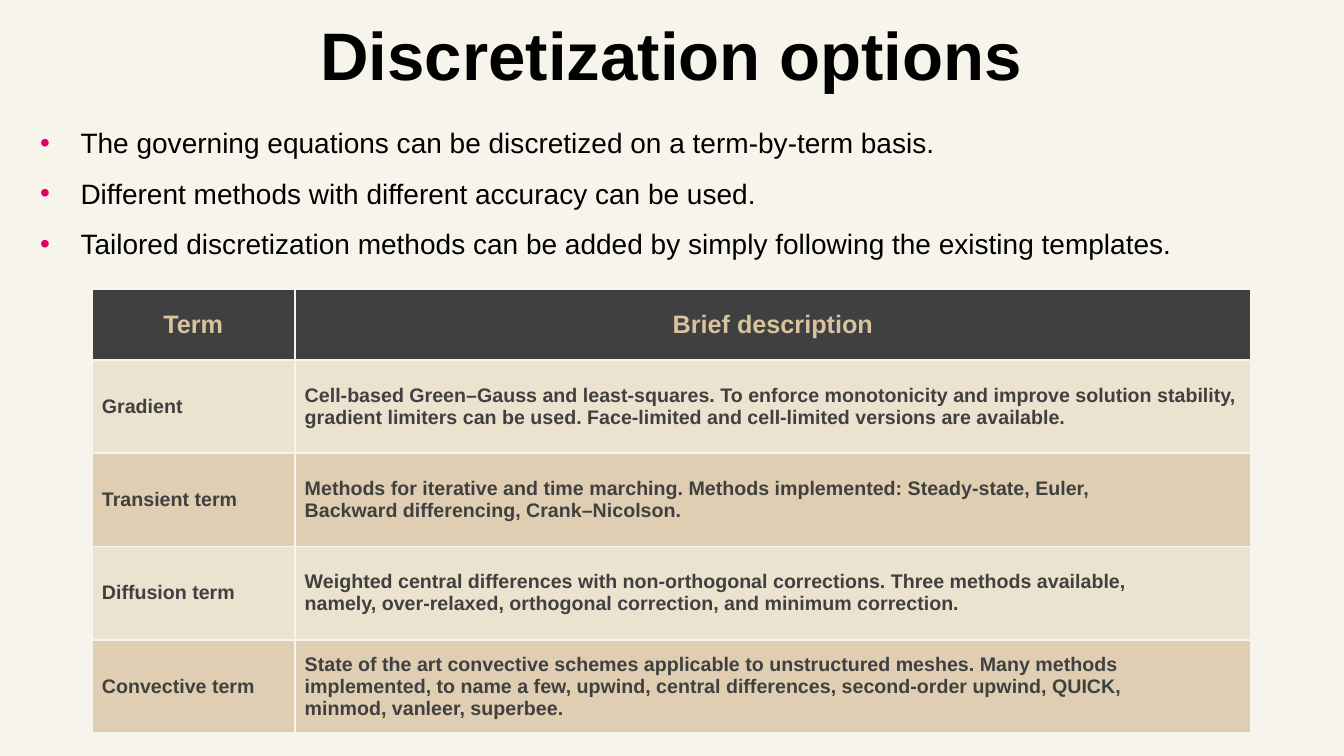
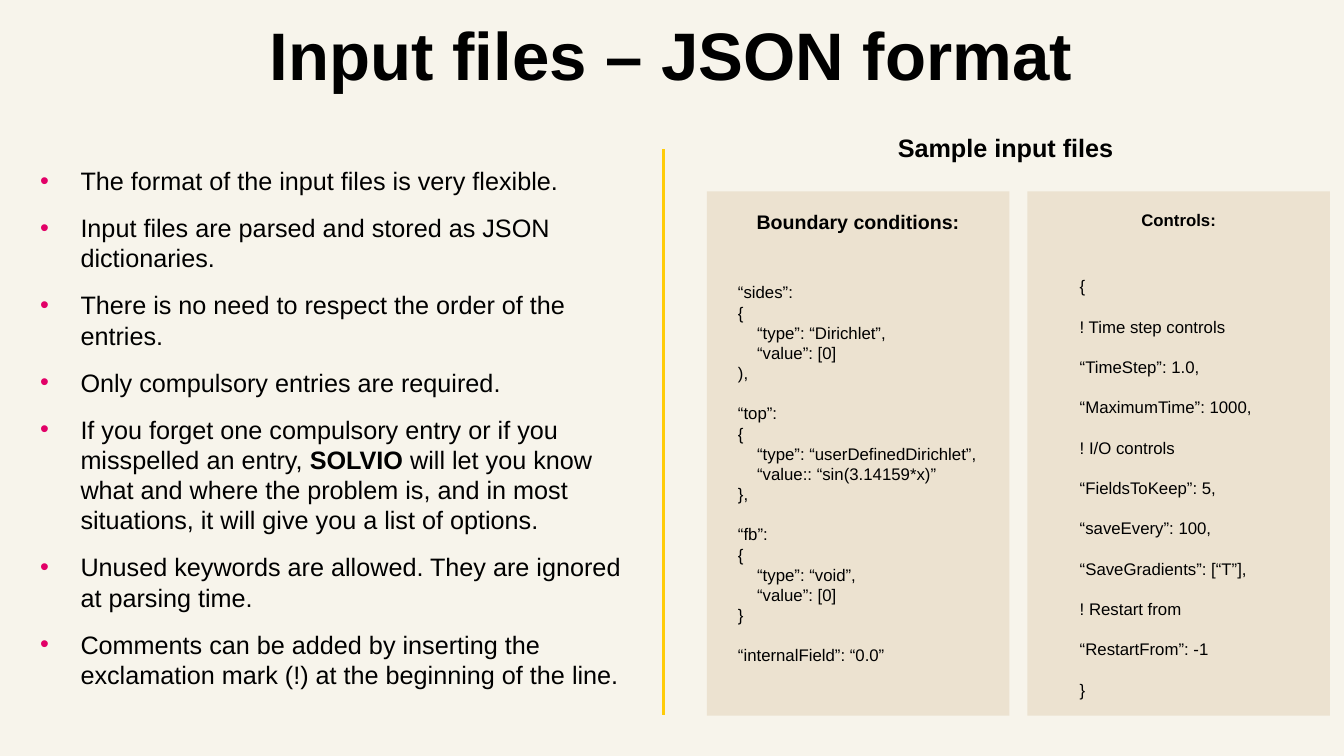
from dataclasses import dataclass

from lxml import etree
from pptx import Presentation
from pptx import util as u
from pptx.dml.color import RGBColor
from pptx.enum import shapes, text
from pptx.oxml import ns


@dataclass(frozen=True)
class Theme:
    font: str = "Arial"
    page: str = "F7F4EB"
    ink: str = "000000"
    bullet: str = "E20067"
    rule: str = "FFCC09"
    panel: str = "ECE2D0"
    band: str = "E0CEB2"
    header: str = "404040"
    header_ink: str = "D9C39E"
    title: int = 48
    lead: int = 20
    body: int = 18
    cell: int = 14
    code: int = 12
    code_line: float = 14.4


T = Theme()
W, H = u.Inches(13.33), u.Inches(7.5)
LEFT, FULL = 2.25, 95.4
PANEL_X, PANEL_Y, PANEL_W, PANEL_H, PANEL_STEP = 52.6, 25.33, 22.5, 69.33, 23.85

OPTIONS = [
    "The governing equations can be discretized on a term-by-term basis.",
    "Different methods with different accuracy can be used.",
    "Tailored discretization methods can be added by simply following the existing templates.",
]
TERMS = [
    ("Gradient",
     "Cell-based Green–Gauss and least-squares. To enforce monotonicity and improve solution "
     "stability, gradient limiters can be used. Face-limited and cell-limited versions are available."),
    ("Transient term",
     "Methods for iterative and time marching. Methods implemented: Steady-state, Euler,\n"
     "Backward differencing, Crank–Nicolson."),
    ("Diffusion term",
     "Weighted central differences with non-orthogonal corrections. Three methods available,\n"
     "namely, over-relaxed, orthogonal correction, and minimum correction."),
    ("Convective term",
     "State of the art convective schemes applicable to unstructured meshes. Many methods\n"
     "implemented, to name a few, upwind, central differences, second-order upwind, QUICK,\n"
     "minmod, vanleer, superbee."),
]
SOLVER = "SOLVIO"
FORMAT_NOTES = [
    "The format of the input files is very flexible.",
    "Input files are parsed and stored as JSON dictionaries.",
    "There is no need to respect the order of the entries.",
    "Only compulsory entries are required.",
    f"If you forget one compulsory entry or if you misspelled an entry, {SOLVER} will let you know "
    "what and where the problem is, and in most situations, it will give you a list of options.",
    "Unused keywords are allowed. They are ignored at parsing time.",
    "Comments can be added by inserting the exclamation mark (!) at the beginning of the line.",
]
BOUNDARY_BLOCKS = [
    ["“sides”:", "{", "\t“type”: “Dirichlet”,", "\t“value”: [0]", "),"],
    ["“top”:", "{", "\t“type”: “userDefinedDirichlet”,", "\t“value:: “sin(3.14159*x)”", "},"],
    ["“fb”:", "{", "\t“type”: “void”,", "\t“value”: [0]", "}"],
    ["“internalField”: “0.0”"],
]
CONTROL_BLOCKS = [[line] for line in (
    "{", "! Time step controls", "“TimeStep”: 1.0,", "“MaximumTime”: 1000,", "! I/O controls",
    "“FieldsToKeep”: 5,", "“saveEvery”: 100,", "“SaveGradients”: [“T”],", "! Restart from",
    "“RestartFrom”: -1", "}")]


def rgb(color):
    return RGBColor.from_string(color)


def area(x, y, w, h):
    """Turn percentages of the slide's size into lengths."""
    return [int(size * share / 100) for size, share in ((W, x), (H, y), (W, w), (H, h))]


def format_runs(p, size, color=T.ink, bold=False):
    for r in p.runs:
        r.font.name, r.font.size, r.font.bold = T.font, u.Pt(size), bold
        r.font.color.rgb = rgb(color)


def add_title(s, title):
    sp = s.shapes.title
    sp.left, sp.top, sp.width, sp.height = area(LEFT, 0.93, FULL, 12.13)
    tf = sp.text_frame
    tf.text = title
    tf.auto_size = text.MSO_AUTO_SIZE.NONE
    tf.vertical_anchor = text.MSO_ANCHOR.BOTTOM
    tf.paragraphs[0].alignment = text.PP_ALIGN.CENTER
    format_runs(tf.paragraphs[0], T.title, bold=True)


def add_text(s, box, lines):
    tf = s.shapes.add_textbox(*area(*box)).text_frame
    tf.word_wrap = True
    tf.text = "\n".join(lines)
    return tf


def add_heading(s, box, heading, size):
    p = add_text(s, box, [heading]).paragraphs[0]
    p.alignment = text.PP_ALIGN.CENTER
    format_runs(p, size, bold=True)


def set_bullet(p):
    pPr = p._p.get_or_add_pPr()
    pPr.set("marL", str(u.Inches(0.4)))
    pPr.set("indent", str(-u.Inches(0.4)))
    color = etree.SubElement(pPr, ns.qn("a:buClr"))
    etree.SubElement(color, ns.qn("a:srgbClr"), val=T.bullet)
    etree.SubElement(pPr, ns.qn("a:buFont"), typeface=T.font)
    etree.SubElement(pPr, ns.qn("a:buChar"), char="•")


def add_bullets(s, box, items, size):
    for p, item in zip(add_text(s, box, items).paragraphs, items):
        before, name, after = item.partition(SOLVER)
        p.text = before
        for part in filter(None, (name, after)):
            p.add_run().text = part
        p.space_before = p.space_after = u.Pt(6)
        p.line_spacing = u.Pt(size * 1.2)
        format_runs(p, size)
        for r in p.runs:
            r.font.bold = r.text == SOLVER
        set_bullet(p)


def add_code(s, box, blocks):
    """Set blocks of lines one line apart; a leading tab marks an indented line."""
    lines = [(line, i > 0 and j == 0) for i, block in enumerate(blocks) for j, line in enumerate(block)]
    tf = add_text(s, box, [line.lstrip("\t") for line, _ in lines])
    for p, (line, opens_block) in zip(tf.paragraphs, lines):
        p.line_spacing = u.Pt(T.code_line)
        p.space_before = u.Pt(T.code_line if opens_block else 0)
        if line.startswith("\t"):
            p._p.get_or_add_pPr().set("marL", str(u.Inches(0.19)))
        format_runs(p, T.code)


def add_panel(s, column, heading, size, code_box, blocks):
    x = PANEL_X + column * PANEL_STEP
    sp = s.shapes.add_shape(shapes.MSO_SHAPE.RECTANGLE, *area(x, PANEL_Y, PANEL_W, PANEL_H))
    sp.shadow.inherit = False
    sp.fill.solid()
    sp.fill.fore_color.rgb = rgb(T.panel)
    sp.line.fill.background()
    add_heading(s, (x, 27.07, PANEL_W, 4.5), heading, size)
    inset, *rest = code_box
    add_code(s, (x + inset, *rest), blocks)


def add_rule(s, x, top, bottom):
    left, y1, _, y2 = area(x, top, 0, bottom)
    line = s.shapes.add_connector(shapes.MSO_CONNECTOR.STRAIGHT, left, y1, left, y2)
    line.line.color.rgb, line.line.width = rgb(T.rule), u.Pt(2)
    etree.SubElement(line._element.spPr, ns.qn("a:effectLst"))


def set_borders(cell):
    tcPr = cell._tc.get_or_add_tcPr()
    for side in ("lnL", "lnR", "lnT", "lnB"):
        ln = etree.SubElement(tcPr, ns.qn(f"a:{side}"), w=str(u.Pt(1.5)))
        fill = etree.SubElement(ln, ns.qn("a:solidFill"))
        etree.SubElement(fill, ns.qn("a:srgbClr"), val=T.page)


def fill_cell(cell, content, fill, size, color, align):
    set_borders(cell)
    cell.fill.solid()
    cell.fill.fore_color.rgb = rgb(fill)
    cell.vertical_anchor = text.MSO_ANCHOR.MIDDLE
    cell.text_frame.text = content
    for p in cell.text_frame.paragraphs:
        p.alignment = align
        format_runs(p, size, color, bold=True)


def add_terms_table(s, box, header, rows):
    left, top, width, height = area(*box)
    table = s.shapes.add_table(len(rows) + 1, len(header), left, top, width, height).table
    for column, share in zip(table.columns, (0.175, 0.825)):
        column.width = int(width * share)
    for i, row in enumerate([header, *rows]):
        table.rows[i].height = int(height * (0.21 if i else 0.16))
        if i:
            style = (T.panel if i % 2 else T.band, T.cell, T.header, text.PP_ALIGN.LEFT)
        else:
            style = (T.header, T.body, T.header_ink, text.PP_ALIGN.CENTER)
        for j, content in enumerate(row):
            fill_cell(table.cell(i, j), content, *style)


def add_slide(prs, title):
    s = prs.slides.add_slide(prs.slide_layouts[5])
    add_title(s, title)
    return s


def main():
    prs = Presentation()
    prs.slide_width, prs.slide_height = W, H
    background = prs.slide_master.background.fill
    background.solid()
    background.fore_color.rgb = rgb(T.page)

    s = add_slide(prs, "Discretization options")
    add_bullets(s, (LEFT, 16, FULL, 19.33), OPTIONS, T.lead)
    add_terms_table(s, (6.83, 38.27, 86.25, 58.67), ("Term", "Brief description"), TERMS)

    s = add_slide(prs, "Input files – JSON format")
    add_bullets(s, (LEFT, 21.2, 44.86, 71.33), FORMAT_NOTES, T.body)
    add_rule(s, 49.36, 19.73, 94.53)
    add_heading(s, (54.16, 16.8, 41.33, 5.33), "Sample input files", T.body)
    add_panel(s, 0, "Boundary conditions:", T.cell, (1.57, 36.67, 20.63, 52.53), BOUNDARY_BLOCKS)
    add_panel(s, 1, "Controls:", T.code, (3.15, 35.87, 17.63, 57.87), CONTROL_BLOCKS)

    prs.save("out.pptx")


if __name__ == "__main__":
    main()
